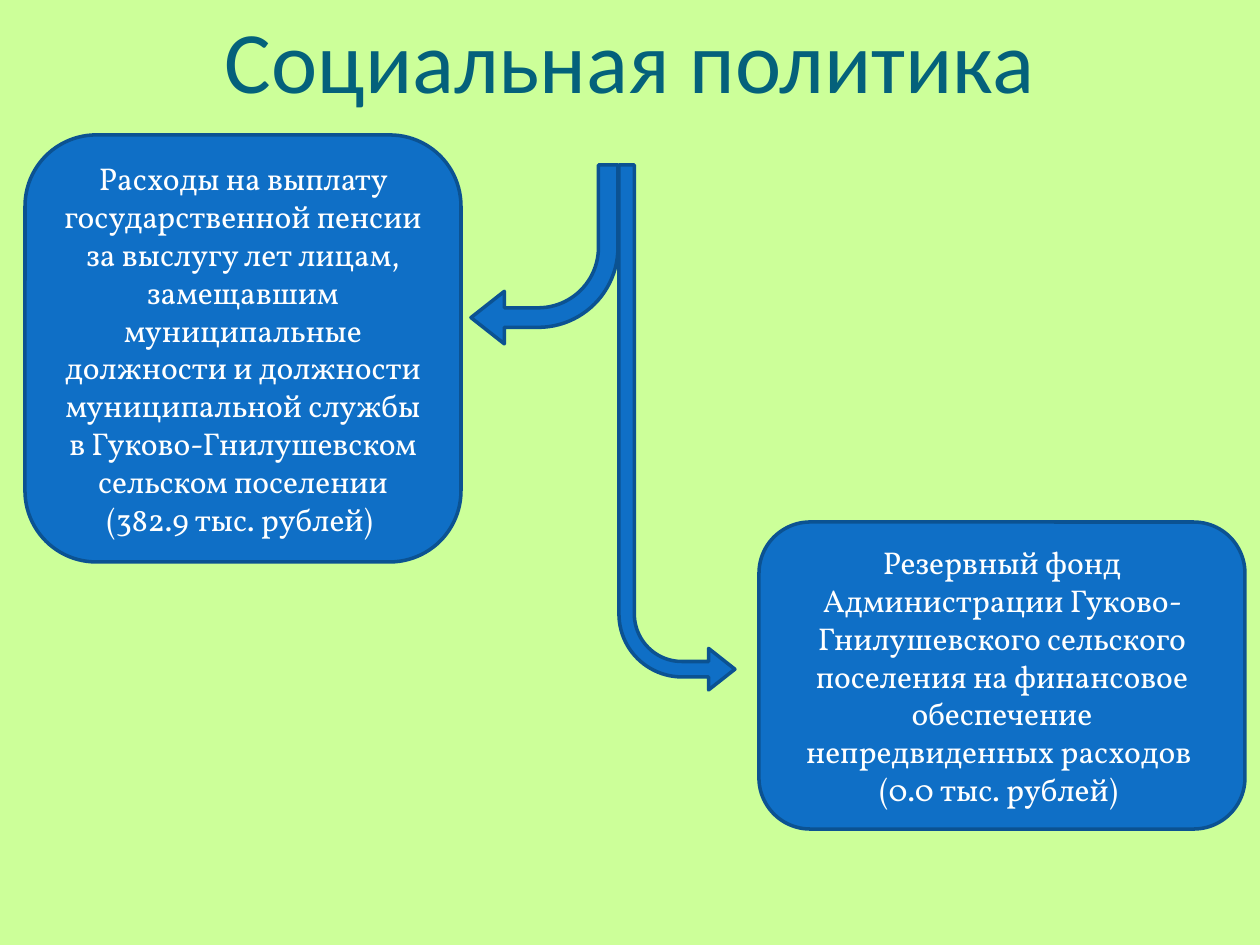
from pptx import Presentation
from pptx.dml.color import RGBColor
from pptx.enum.shapes import MSO_SHAPE
from pptx.enum.text import MSO_ANCHOR, PP_ALIGN
from pptx.oxml.ns import qn
from pptx.util import Emu, Pt

COLORS = {
    "background": "CCFF99",
    "title": "04617B",
    "fill": "0F6FC6",
    "outline": "0B5292",
    "text": "FFFFFF",
}
PIXELS_PER_INCH = 126
SLIDE_WIDTH, SLIDE_HEIGHT = 1260, 945
ARROW_TOP = 165
ARROW_ADJUSTMENTS = (0.133, 0.179, 0.227, 0.543)


def px(length):
    return Emu(round(length * 914400 / PIXELS_PER_INCH))


def color(name):
    return RGBColor.from_string(COLORS[name])


class SlideBuilder:
    """Draws styled elements on the current slide."""

    def __init__(self, slide):
        self.slide = slide

    def format_text(self, text_frame, font_name, size, color_name):
        text_frame.word_wrap = True
        for paragraph in text_frame.paragraphs:
            paragraph.alignment = PP_ALIGN.CENTER
            for run in paragraph.runs:
                run.font.name = font_name
                run.font.size = Pt(size)
                run.font.color.rgb = color(color_name)

    def title(self, text):
        title = self.slide.shapes.title
        title.left, title.top = px(0), px(0)
        title.width, title.height = px(SLIDE_WIDTH), px(SLIDE_HEIGHT)
        title.fill.solid()
        title.fill.fore_color.rgb = color("background")
        text_frame = title.text_frame
        text_frame.text = text
        text_frame.vertical_anchor = MSO_ANCHOR.TOP
        text_frame.margin_left = text_frame.margin_right = px(0)
        text_frame.margin_top, text_frame.margin_bottom = px(6), px(0)
        self.format_text(text_frame, "Calibri", 50, "title")

    def shape(self, kind, left, top, width, height):
        shape = self.slide.shapes.add_shape(
            kind, px(left), px(top), px(width), px(height)
        )
        shape.shadow.inherit = False
        shape.fill.solid()
        shape.fill.fore_color.rgb = color("fill")
        shape.line.color.rgb = color("outline")
        shape.line.width = Pt(2)
        return shape

    def box(self, text, left, top, width, height):
        shape = self.shape(MSO_SHAPE.ROUNDED_RECTANGLE, left, top, width, height)
        shape.text_frame.text = text
        shape.text_frame.vertical_anchor = MSO_ANCHOR.MIDDLE
        self.format_text(shape.text_frame, "Vollkorn", 18, "text")

    def arrow(self, left, width, height, flips):
        shape = self.shape(MSO_SHAPE.BENT_ARROW, left, ARROW_TOP, width, height)
        for index, value in enumerate(ARROW_ADJUSTMENTS):
            shape.adjustments[index] = value
        transform = shape.element.spPr.find(qn("a:xfrm"))
        for flip in flips:
            transform.set(flip, "1")


def main():
    presentation = Presentation()
    presentation.slide_width = px(SLIDE_WIDTH)
    presentation.slide_height = px(SLIDE_HEIGHT)
    slide = presentation.slides.add_slide(presentation.slide_layouts[5])
    builder = SlideBuilder(slide)
    builder.title("Социальная политика")
    builder.box(
        "Расходы на выплату государственной пенсии за выслугу лет лицам, "
        "замещавшим муниципальные должности и должности муниципальной службы "
        "в Гуково-Гнилушевском сельском поселении (382.9 тыс. рублей) ",
        25, 135, 436, 427,
    )
    builder.box(
        "Резервный фонд Администрации Гуково-Гнилушевского сельского поселения "
        "на финансовое обеспечение непредвиденных расходов \n(0.0 тыс. рублей) ",
        759, 522, 486, 307,
    )
    builder.arrow(471, 147, 179, ("flipH", "flipV"))
    builder.arrow(619, 116, 525, ("flipV",))
    presentation.save("out.pptx")


if __name__ == "__main__":
    main()
